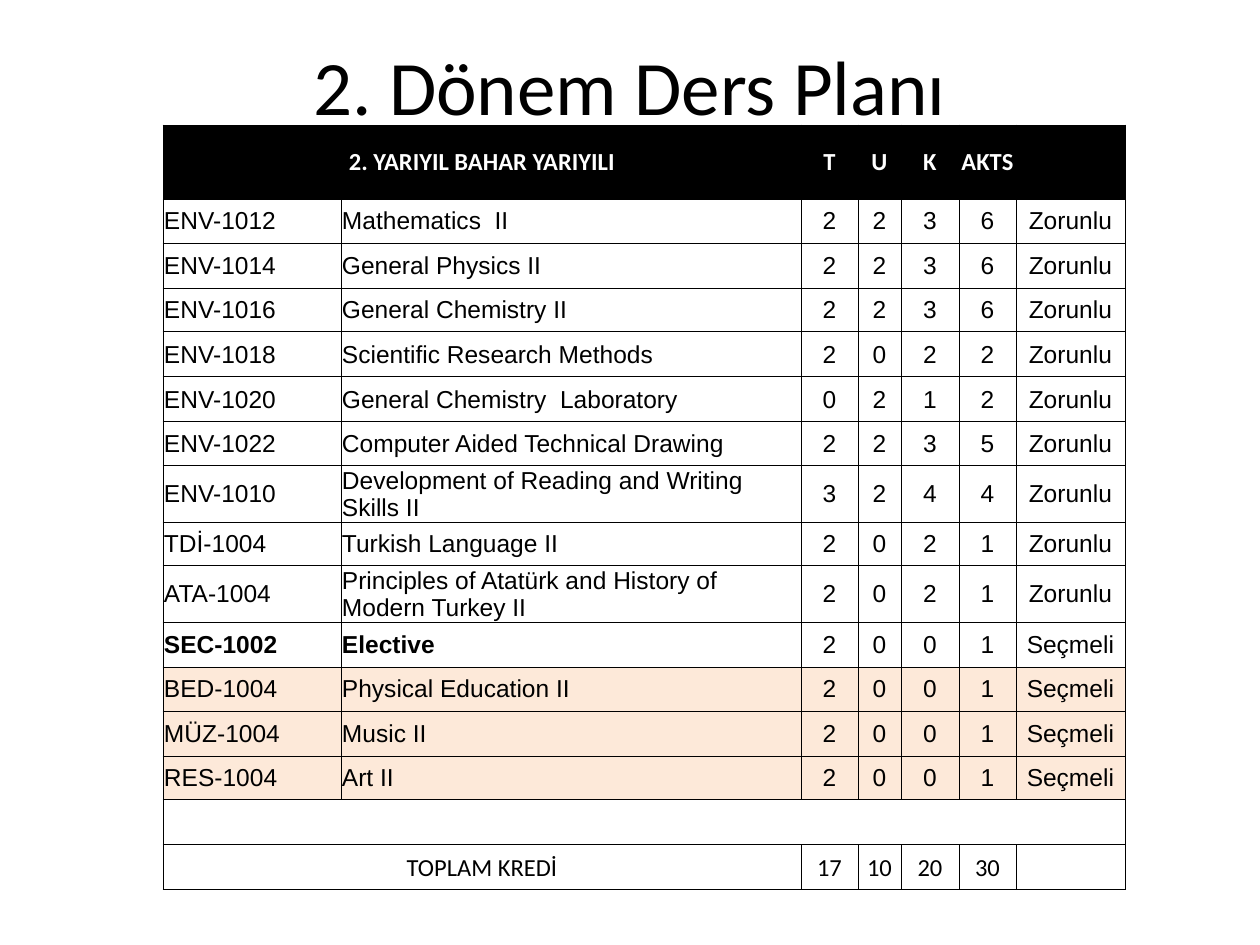
from lxml.etree import SubElement
from pptx import Presentation
from pptx.dml.color import RGBColor
from pptx.enum.text import MSO_ANCHOR, PP_ALIGN
from pptx.oxml.ns import qn
from pptx.util import Emu, Pt

BLACK = RGBColor(0x00, 0x00, 0x00)
WHITE = RGBColor(0xFF, 0xFF, 0xFF)
PEACH = RGBColor(0xFD, 0xE9, 0xD9)
HEAD = "Calibri"
BODY = "Arial"

# Course rows: code, name, T, U, K, AKTS, type
COURSES = [
    ("ENV-1012", "Mathematics  II", 2, 2, 3, 6, "Zorunlu"),
    ("ENV-1014", "General Physics II", 2, 2, 3, 6, "Zorunlu"),
    ("ENV-1016", "General Chemistry II", 2, 2, 3, 6, "Zorunlu"),
    ("ENV-1018", "Scientific Research Methods", 2, 0, 2, 2, "Zorunlu"),
    ("ENV-1020", "General Chemistry  Laboratory", 0, 2, 1, 2, "Zorunlu"),
    ("ENV-1022", "Computer Aided Technical Drawing", 2, 2, 3, 5, "Zorunlu"),
    ("ENV-1010", "Development of Reading and Writing Skills II", 3, 2, 4, 4, "Zorunlu"),
    ("TDİ-1004", "Turkish Language II", 2, 0, 2, 1, "Zorunlu"),
    ("ATA-1004", "Principles of Atatürk and History of Modern Turkey II", 2, 0, 2, 1, "Zorunlu"),
    ("SEC-1002", "Elective", 2, 0, 0, 1, "Seçmeli"),
    ("BED-1004", "Physical Education II", 2, 0, 0, 1, "Seçmeli"),
    ("MÜZ-1004", "Music II", 2, 0, 0, 1, "Seçmeli"),
    ("RES-1004", "Art II", 2, 0, 0, 1, "Seçmeli"),
]
HEADER = ("2. YARIYIL BAHAR YARIYILI", "", "T", "U", "K", "AKTS", "")
TOTAL = ("TOPLAM KREDİ", "", 17, 10, 20, 30, "")
COLS = (178, 460, 57, 43, 58, 57, 109)
HEAD_H, BODY_H = 74, 669


def px(n):
    return Emu(int(n * 914400 / 126))


class Deck:
    def __init__(self):
        self.prs = Presentation()
        self.prs.slide_width, self.prs.slide_height = px(1260), px(945)
        self.slide = self.prs.slides.add_slide(self.prs.slide_layouts[5])

    def run(self, para, text, size, font, color=BLACK, bold=False):
        run = para.add_run()
        run.text = text
        run.font.size = Pt(size)
        run.font.name = font
        run.font.bold = bold
        run.font.color.rgb = color

    def title(self, text, x, y, w, h):
        box = self.slide.shapes.title
        box.left, box.top, box.width, box.height = px(x), px(y), px(w), px(h)
        box.text_frame.vertical_anchor = MSO_ANCHOR.MIDDLE
        para = box.text_frame.paragraphs[0]
        para.alignment = PP_ALIGN.CENTER
        self.run(para, text, 44, HEAD)

    def table(self, x, y, h, cols, rows):
        frame = self.slide.shapes.add_table(
            len(rows), len(cols), px(x), px(y), px(sum(cols)), px(h))
        grid = frame.table
        grid.first_row = grid.horz_banding = False
        for col, width in zip(grid.columns, cols):
            col.width = px(width)
        for row, height in zip(grid.rows, rows):
            row.height = px(height)
        frame.height = px(h)
        return grid

    def edges(self, cell, sides):
        props = cell._tc.get_or_add_tcPr()
        for side in "LRTB":
            line = SubElement(props, qn("a:ln" + side), w=str(Pt(0.5)))
            if side in sides:
                fill = SubElement(line, qn("a:solidFill"))
                SubElement(fill, qn("a:srgbClr"), val=str(BLACK))
            else:
                SubElement(line, qn("a:noFill"))

    def cell(self, cell, text, font=BODY, color=BLACK, bold=False,
             fill=None, align=PP_ALIGN.CENTER, sides="LRTB"):
        cell.margin_left = cell.margin_right = cell.margin_top = px(1)
        cell.margin_bottom = 0
        cell.vertical_anchor = MSO_ANCHOR.MIDDLE
        self.edges(cell, sides)
        if fill is None:
            cell.fill.background()
        else:
            cell.fill.solid()
            cell.fill.fore_color.rgb = fill
        if text != "":
            para = cell.text_frame.paragraphs[0]
            para.alignment = align
            self.run(para, str(text), 14, font, color, bold)


def main():
    deck = Deck()
    deck.title("2. Dönem Ders Planı", 63, 6, 1134, 158)

    # Header row, then equal rows for courses, spacer and total
    count = len(COURSES) + 2
    marks = [BODY_H * i // count for i in range(count + 1)]
    rows = [HEAD_H] + [b - a for a, b in zip(marks, marks[1:])]
    grid = deck.table(163, 125, 775, COLS, rows)
    spacer, last = count - 1, count

    # Header and total, each with its first two cells joined
    for col, (name, total) in enumerate(zip(HEADER, TOTAL)):
        deck.cell(grid.cell(0, col), name, HEAD, WHITE, True, BLACK)
        deck.cell(grid.cell(last, col), total, HEAD)
    for row in (0, last):
        grid.cell(row, 0).merge(grid.cell(row, 1))

    # Courses: the elective group is bold, its choices are tinted
    group = [c[0] for c in COURSES].index("SEC-1002")
    for i, course in enumerate(COURSES):
        for col, text in enumerate(course):
            deck.cell(grid.cell(i + 1, col), text,
                      bold=i == group and col < 2,
                      fill=PEACH if i > group else None,
                      align=PP_ALIGN.LEFT if col < 2 else PP_ALIGN.CENTER)

    # Spacer row with an outer frame only
    ends = {0: "LTB", len(COLS) - 1: "RTB"}
    for col in range(len(COLS)):
        deck.cell(grid.cell(spacer, col), "", sides=ends.get(col, "TB"))

    deck.prs.save("out.pptx")


if __name__ == "__main__":
    main()
